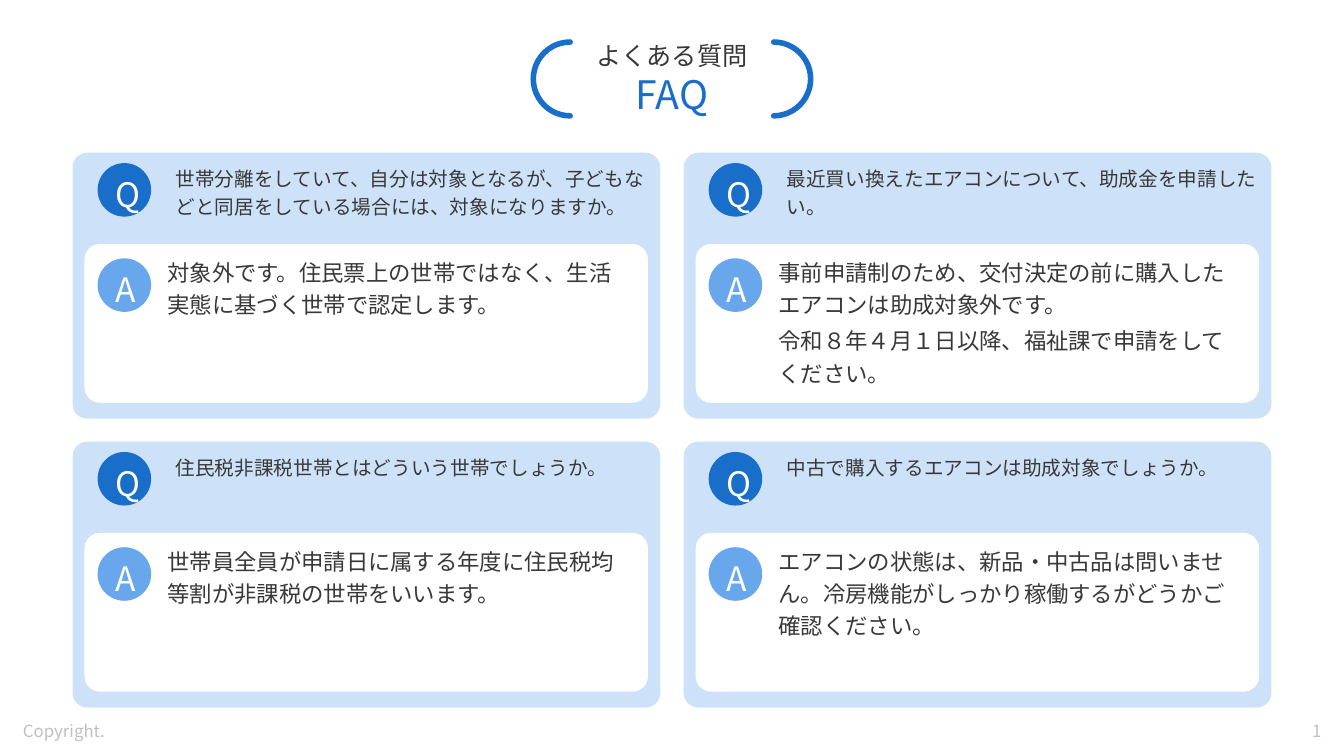
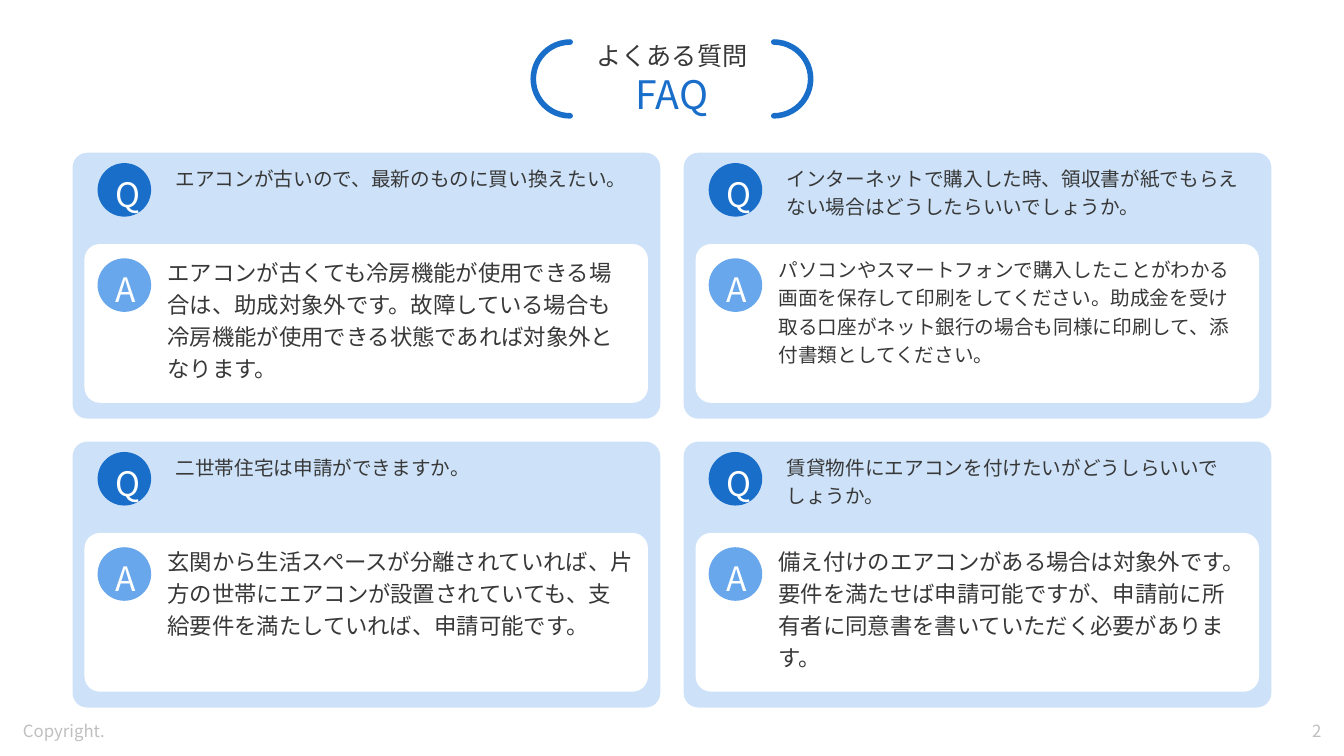
import pptx
import pptx.util
import pptx.dml.color
import pptx.enum.lang
import pptx.enum.shapes
import pptx.enum.text
import pptx.oxml.ns
import lxml.etree

Cm = pptx.util.Cm
Pt = pptx.util.Pt
Shape = pptx.enum.shapes.MSO_SHAPE
Align = pptx.enum.text.PP_ALIGN
Anchor = pptx.enum.text.MSO_ANCHOR

FONT = "Noto Sans CJK JP"
BLUE = "196ECA"
SKY = "68A7EC"
PALE = "CDE2F9"
WHITE = "FFFFFF"
INK = "383838"
GREY = "BFBFBF"

PAGES = [
    [
        ("世帯分離をしていて、自分は対象となるが、子どもなどと同居をしている場合には、対象になりますか。",
         ["対象外です。住民票上の世帯ではなく、生活実態に基づく世帯で認定します。"], 16),
        ("最近買い換えたエアコンについて、助成金を申請したい。",
         ["事前申請制のため、交付決定の前に購入したエアコンは助成対象外です。",
          "令和８年４月１日以降、福祉課で申請をしてください。"], 16),
        ("住民税非課税世帯とはどういう世帯でしょうか。",
         ["世帯員全員が申請日に属する年度に住民税均等割が非課税の世帯をいいます。"], 16),
        ("中古で購入するエアコンは助成対象でしょうか。",
         ["エアコンの状態は、新品・中古品は問いません。冷房機能がしっかり稼働するがどうかご確認ください。"], 16),
    ],
    [
        ("エアコンが古いので、最新のものに買い換えたい。",
         ["エアコンが古くても冷房機能が使用できる場合は、助成対象外です。故障している場合も冷房機能が使用できる状態であれば対象外となります。"], 16),
        ("インターネットで購入した時、領収書が紙でもらえない場合はどうしたらいいでしょうか。",
         ["パソコンやスマートフォンで購入したことがわかる画面を保存して印刷をしてください。助成金を受け取る口座がネット銀行の場合も同様に印刷して、添付書類としてください。"], 14),
        ("二世帯住宅は申請ができますか。",
         ["玄関から生活スペースが分離されていれば、片方の世帯にエアコンが設置されていても、支給要件を満たしていれば、申請可能です。"], 16),
        ("賃貸物件にエアコンを付けたいがどうしらいいでしょうか。",
         ["備え付けのエアコンがある場合は対象外です。要件を満たせば申請可能ですが、申請前に所有者に同意書を書いていただく必要があります。"], 16),
    ],
]


def tint(code):
    return pptx.dml.color.RGBColor.from_string(code)


class Deck:
    def __init__(self):
        self.file = pptx.Presentation()
        self.file.slide_width = Cm(33.87)
        self.file.slide_height = Cm(19.05)
        self.slide = None

    def page(self):
        self.slide = self.file.slides.add_slide(self.file.slide_layouts[6])
        self.foot(31.34, 2.21, str(len(self.file.slides)), Align.RIGHT)
        self.foot(0.33, 4.6, "Copyright.", Align.LEFT)

    def style(self, para, size, color, align, lead=1.2, after=3, indent=0):
        para.alignment = align
        if lead:
            para.line_spacing = lead
            para.space_after = Pt(after)
        if indent:
            props = para._p.get_or_add_pPr()
            props.set("marL", str(Cm(indent)))
            props.set("indent", "0")
        font = para.font
        font.size = Pt(size)
        font.name = FONT
        font.language_id = pptx.enum.lang.MSO_LANGUAGE_ID.JAPANESE
        font.color.rgb = tint(color)
        east = lxml.etree.SubElement(font._element, pptx.oxml.ns.qn("a:ea"))
        east.set("typeface", FONT)

    def label(self, shape, lines, size, color, align, anchor, indent=0):
        frame = shape.text_frame
        frame.word_wrap = True
        frame.vertical_anchor = anchor
        frame.text = "\n".join(lines)
        for para in frame.paragraphs:
            self.style(para, size, color, align, indent=indent)

    def foot(self, left, width, text, align):
        box = self.slide.shapes.add_textbox(Cm(left), Cm(17.93), Cm(width), Cm(0.81))
        self.label(box, [text], 12, GREY, align, Anchor.TOP)
        box.text_frame.auto_size = pptx.enum.text.MSO_AUTO_SIZE.SHAPE_TO_FIT_TEXT

    def shape(self, kind, left, top, width, height, fill=None):
        item = self.slide.shapes.add_shape(kind, Cm(left), Cm(top), Cm(width), Cm(height))
        item.shadow.inherit = False
        if fill:
            item.fill.solid()
            item.fill.fore_color.rgb = tint(fill)
            item.line.fill.background()
        else:
            item.fill.background()
        return item

    def panel(self, left, top, width, height, fill, curve, lines, size, indent):
        item = self.shape(Shape.ROUNDED_RECTANGLE, left, top, width, height, fill)
        item.adjustments[0] = curve
        self.label(item, lines, size, INK, Align.LEFT, Anchor.TOP, indent)

    def badge(self, left, top, text, fill):
        item = self.shape(Shape.OVAL, left, top, 1.35, 1.35, fill)
        self.label(item, [text], 24, WHITE, Align.CENTER, Anchor.MIDDLE)

    def card(self, left, top, ask, reply, size):
        self.panel(left, top, 14.81, 6.7, PALE, 0.055, [ask], 14, 2.24)
        self.panel(left + 0.3, top + 2.3, 14.2, 4, WHITE, 0.097, reply, size, 1.73)
        self.badge(left + 0.63, top + 0.26, "Q", BLUE)
        self.badge(left + 0.63, top + 2.66, "A", SKY)

    def title(self, head, name):
        item = self.shape(Shape.DOUBLE_BRACKET, 13.44, 1.06, 6.99, 1.86)
        item.adjustments[0] = 0.5
        item.line.color.rgb = tint(BLUE)
        item.line.width = Pt(4)
        item.line._get_or_add_ln().set("cap", "rnd")
        frame = item.text_frame
        frame.word_wrap = True
        frame.vertical_anchor = Anchor.MIDDLE
        frame.text = head + "\n" + name
        for para, size, color in zip(frame.paragraphs, (18, 28), (INK, BLUE)):
            self.style(para, size, color, Align.CENTER, lead=None)


def main():
    deck = Deck()
    for cards in PAGES:
        deck.page()
        for spot, (ask, reply, size) in enumerate(cards):
            row, col = divmod(spot, 2)
            deck.card(1.83 + col * 15.4, 3.85 + row * 7.28, ask, reply, size)
        deck.title("よくある質問", "FAQ")
    deck.file.save("out.pptx")


if __name__ == "__main__":
    main()
